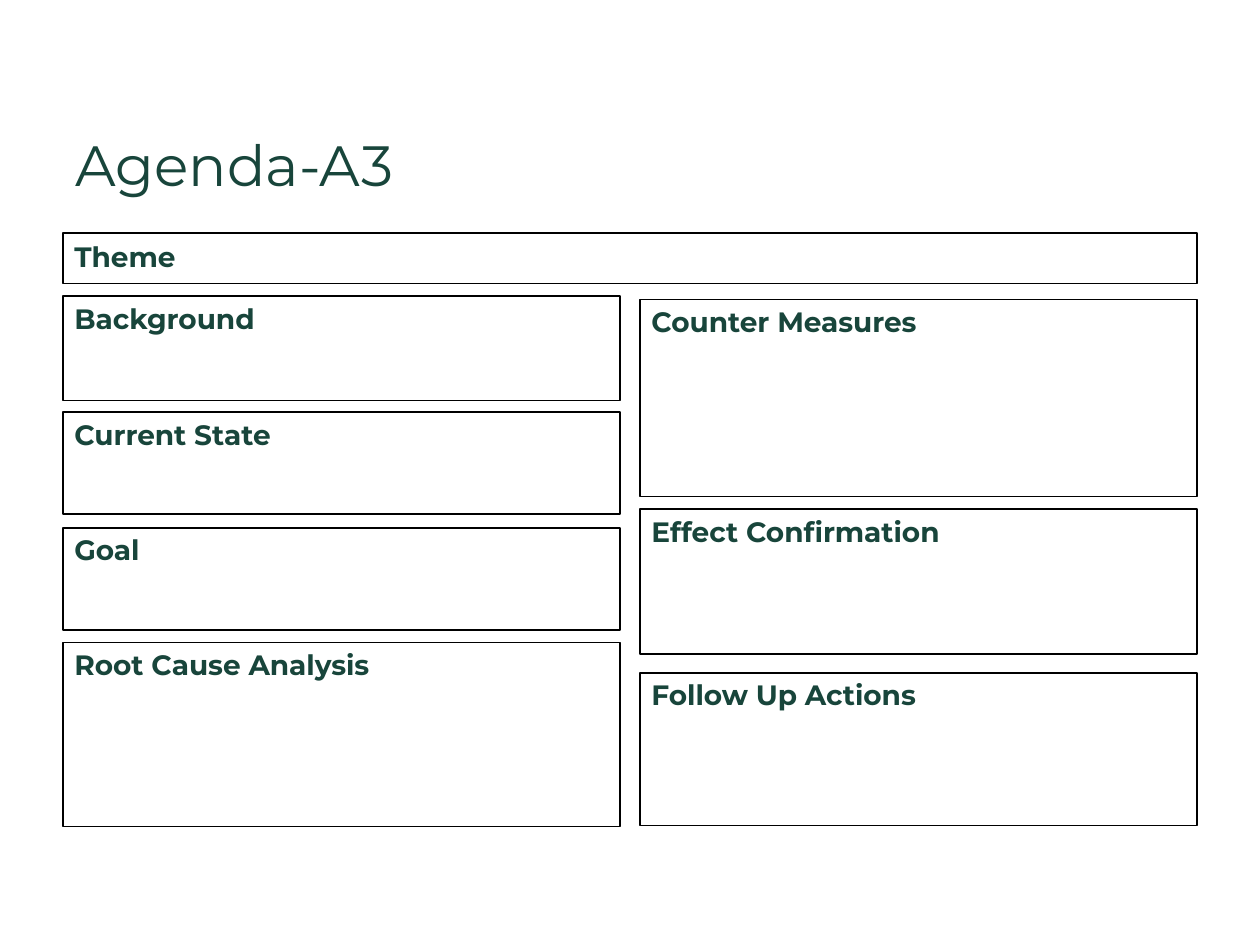
"""Build a one-page A3 agenda with a theme bar and two columns of panels."""
from pptx import Presentation
from pptx.dml.color import RGBColor
from pptx.enum.shapes import MSO_SHAPE
from pptx.enum.text import MSO_ANCHOR, PP_ALIGN
from pptx.util import Inches, Pt

RECTANGLE = MSO_SHAPE.RECTANGLE
TOP = MSO_ANCHOR.TOP
LEFT = PP_ALIGN.LEFT
GREEN = RGBColor(0x18, 0x45, 0x3B)
BLACK = RGBColor(0, 0, 0)

MARGIN = 0.5
GUTTER = 0.16
FULL_WIDTH = 10 - 2 * MARGIN
COLUMN_WIDTH = (FULL_WIDTH - GUTTER) / 2
RIGHT_COLUMN = MARGIN + COLUMN_WIDTH + GUTTER


def write_text(box, text, size, bold, side_inset, top_inset):
    frame = box.text_frame
    layout = {
        "word_wrap": True,
        "vertical_anchor": TOP,
        "margin_left": Inches(side_inset),
        "margin_right": Inches(side_inset),
        "margin_top": Inches(top_inset),
        "margin_bottom": Inches(top_inset),
    }
    for name, value in layout.items():
        setattr(frame, name, value)
    para = frame.paragraphs[0]
    para.alignment = LEFT
    span = para.add_run()
    span.text = text
    for name, value in {"name": "Montserrat", "size": Pt(size), "bold": bold}.items():
        setattr(span.font, name, value)
    span.font.color.rgb = GREEN


deck = Presentation()
deck.slide_width, deck.slide_height = Inches(10), Inches(7.5)
page = deck.slides.add_slide(deck.slide_layouts[6])

title = page.shapes.add_textbox(
    Inches(MARGIN), Inches(0.96), Inches(FULL_WIDTH), Inches(0.53)
)
write_text(title, "Agenda-A3", 32.4, False, 0.1, 0.07)

columns = [
    (MARGIN, FULL_WIDTH, 0.05, [("Theme", 1.85, 0.4)]),
    (MARGIN, COLUMN_WIDTH, 0.04, [
        ("Background", 2.35, 0.83),
        ("Current State", 3.27, 0.81),
        ("Goal", 4.19, 0.81),
        ("Root Cause Analysis", 5.1, 1.46),
    ]),
    (RIGHT_COLUMN, COLUMN_WIDTH, 0.04, [
        ("Counter Measures", 2.38, 1.56),
        ("Effect Confirmation", 4.04, 1.15),
        ("Follow Up Actions", 5.34, 1.21),
    ]),
]

for left, width, top_inset, panels in columns:
    for heading, top, height in panels:
        panel = page.shapes.add_shape(
            RECTANGLE, Inches(left), Inches(top), Inches(width), Inches(height)
        )
        panel.shadow.inherit = False
        panel.fill.background()
        panel.line.color.rgb = BLACK
        panel.line.width = Pt(0.75)
        write_text(panel, heading, 16, True, 0.09, top_inset)

deck.save("out.pptx")
